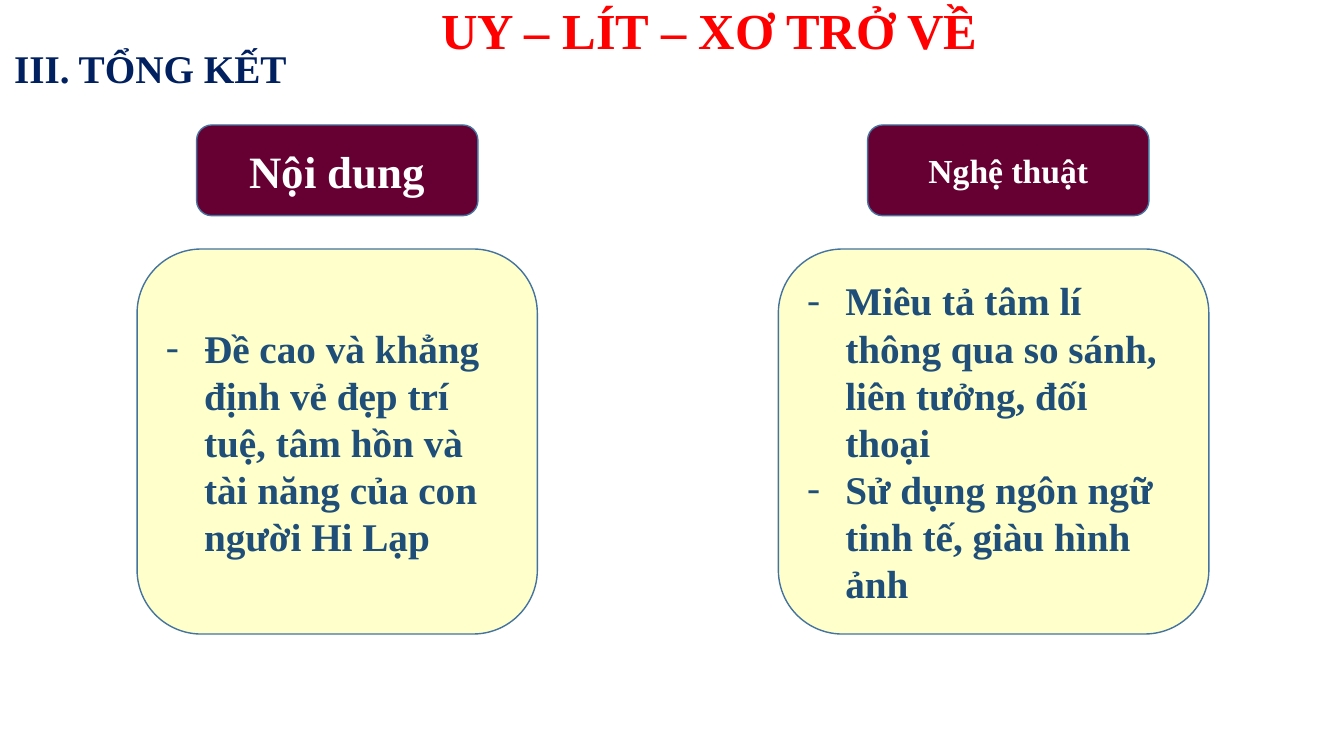
import pptx
import pptx.util
import pptx.dml.color
import pptx.enum.shapes
import pptx.enum.text
import pptx.oxml.ns
import lxml.etree

Inches = pptx.util.Inches
Pt = pptx.util.Pt
ALIGN = pptx.enum.text.PP_ALIGN
FONT = "Times New Roman"
COLORS = {
    "title": "FF0000",
    "section": "002060",
    "header": "660033",
    "header_text": "FFFFFF",
    "card": "FFFFCC",
    "card_text": "1F4E79",
    "outline": "43739E",
}

TITLE = "UY – LÍT – XƠ TRỞ VỀ"
SECTION = "III. TỔNG KẾT"
COLUMNS = [
    {
        "header": "Nội dung",
        "header_size": 32,
        "center": 3.345,
        "card_width": 3.97,
        "points": ["Đề cao và khẳng định vẻ đẹp trí tuệ, tâm hồn và tài năng của con người Hi Lạp"],
    },
    {
        "header": "Nghệ thuật",
        "header_size": 24,
        "center": 10,
        "card_left": 7.72,
        "card_width": 4.27,
        "points": [
            "Miêu tả tâm lí thông qua so sánh, liên tưởng, đối thoại",
            "Sử dụng ngôn ngữ tinh tế, giàu hình ảnh",
        ],
    },
]
HEADER_TOP, HEADER_WIDTH, HEADER_HEIGHT = 1.24, 2.79, 0.9
CARD_TOP, CARD_HEIGHT = 2.47, 3.82
BULLET_INDENT = 0.38


def color(name):
    return pptx.dml.color.RGBColor.from_string(COLORS[name])


def write(shape, lines, size, color_name, alignment):
    frame = shape.text_frame
    frame.text = "\n".join(lines)
    frame.word_wrap = True
    frame.auto_size = pptx.enum.text.MSO_AUTO_SIZE.NONE
    frame.vertical_anchor = pptx.enum.text.MSO_ANCHOR.MIDDLE
    for paragraph in frame.paragraphs:
        paragraph.alignment = alignment
        paragraph.font.name = FONT
        paragraph.font.size = Pt(size)
        paragraph.font.bold = True
        paragraph.font.color.rgb = color(color_name)


def add_box(slide, left, top, width, height, fill):
    shape = slide.shapes.add_shape(
        pptx.enum.shapes.MSO_SHAPE.ROUNDED_RECTANGLE,
        Inches(left), Inches(top), Inches(width), Inches(height))
    shape.shadow.inherit = False
    shape.fill.solid()
    shape.fill.fore_color.rgb = color(fill)
    shape.line.color.rgb = color("outline")
    shape.line.width = Pt(1)
    return shape


def add_dash(paragraph):
    properties = paragraph._p.get_or_add_pPr()
    properties.set("marL", str(Inches(BULLET_INDENT)))
    properties.set("indent", str(-Inches(BULLET_INDENT)))
    bullet = lxml.etree.Element(pptx.oxml.ns.qn("a:buChar"), char="-")
    bullet_font = lxml.etree.Element(pptx.oxml.ns.qn("a:buFont"), typeface=FONT)
    properties.insert(0, bullet_font)
    properties.insert(1, bullet)


def add_column(slide, column):
    center, width = column["center"], column["card_width"]
    card_left = column.get("card_left", center - width / 2)
    card = add_box(slide, card_left, CARD_TOP, width, CARD_HEIGHT, "card")
    write(card, column["points"], 28, "card_text", ALIGN.LEFT)
    for paragraph in card.text_frame.paragraphs:
        add_dash(paragraph)
    header = add_box(slide, center - HEADER_WIDTH / 2, HEADER_TOP,
                     HEADER_WIDTH, HEADER_HEIGHT, "header")
    write(header, [column["header"]], column["header_size"], "header_text", ALIGN.CENTER)


def main():
    presentation = pptx.Presentation()
    presentation.slide_width = Inches(13.33)
    presentation.slide_height = Inches(7.5)
    slide = presentation.slides.add_slide(presentation.slide_layouts[5])

    title = slide.shapes.title
    title.left, title.top = Inches(2.79), Inches(-0.14)
    title.width, title.height = Inches(8.49), Inches(0.86)
    write(title, [TITLE], 36, "title", ALIGN.CENTER)

    section = slide.shapes.add_textbox(0, Inches(0.29), Inches(4.51), Inches(0.76))
    write(section, [SECTION], 28, "section", ALIGN.LEFT)
    section.text_frame.margin_left = Inches(0.14)

    for column in COLUMNS:
        add_column(slide, column)
    presentation.save("out.pptx")


if __name__ == "__main__":
    main()
